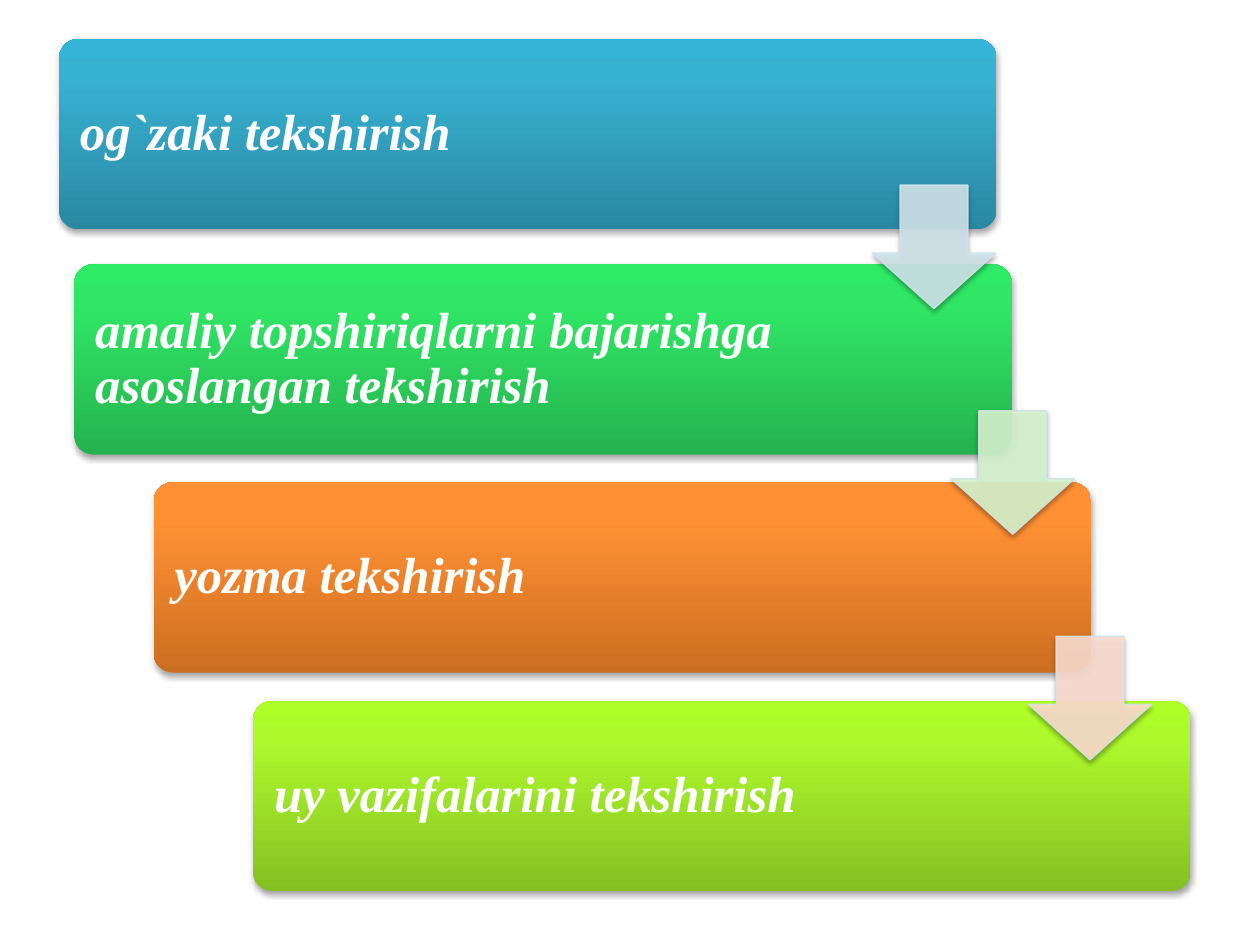
from copy import deepcopy
from dataclasses import dataclass

from lxml import etree
from pptx import Presentation
from pptx.dml.color import RGBColor
from pptx.enum.shapes import MSO_SHAPE as Shape
from pptx.enum.text import MSO_ANCHOR as Anchor, PP_ALIGN as Align
from pptx.oxml.ns import qn
from pptx.util import Pt

BOX_WIDTH, BOX_HEIGHT = 535.7, 108.7
TEXT_WIDTH, TEXT_INSET = 413.3, 3.2
ARROW_SIZE, ARROW_TOP, ARROW_PITCH = 70.6, 105.8, 128.9
MARGIN = 8.7
FONT = "Times New Roman"


@dataclass
class Step:
    text: str
    left: float
    top: float
    gradient: tuple[str, str, str]  # bottom to top


@dataclass
class Arrow:
    left: float
    color: str


STEPS = [
    Step("og`zaki tekshirish", 33.8, 22.3, ("2A88A2", "37B1D2", "34B4D6")),
    Step("amaliy topshiriqlarni bajarishga asoslangan tekshirish",
         42.5, 151.1, ("25B24E", "30E765", "2DEB64")),
    Step("yozma tekshirish", 87.8, 275.6, ("CC6E20", "FF9034", "FF9136")),
    Step("uy vazifalarini tekshirish", 144.7, 400.5, ("85C022", "ADF92C", "AFFE28")),
]
ARROWS = [Arrow(498.4, "D0E3EA"), Arrow(543.4, "D6F4CE"), Arrow(587.6, "FCDDCF")]


def rgb(value: str) -> RGBColor:
    return RGBColor.from_string(value)


def add_alpha(color_element, percent: int) -> None:
    etree.SubElement(color_element, qn("a:alpha"), val=str(percent * 1000))


def add_shadow(shape) -> None:
    """Give the shape a soft black shadow straight below it."""
    shape.shadow.inherit = False
    effects = shape._element.spPr.find(qn("a:effectLst"))
    shadow = etree.SubElement(
        effects, qn("a:outerShdw"), blurRad=str(Pt(3.1)), dist=str(Pt(1.8)),
        dir="5400000", rotWithShape="0")
    add_alpha(etree.SubElement(shadow, qn("a:srgbClr"), val="000000"), 35)


def fill_gradient(shape, colors: tuple[str, str, str]) -> None:
    shape.fill.gradient()
    shape.fill.gradient_angle = 90
    stop_list = shape._element.spPr.find(qn("a:gradFill")).find(qn("a:gsLst"))
    stop_list.append(deepcopy(stop_list[0]))
    for stop, color, position in zip(shape.fill.gradient_stops, colors, (0, 0.8, 1)):
        stop.color.rgb = rgb(color)
        stop.position = position


def add_step(slide, step: Step) -> None:
    # Rounded panel
    box = slide.shapes.add_shape(Shape.ROUNDED_RECTANGLE, Pt(step.left), Pt(step.top),
                                 Pt(BOX_WIDTH), Pt(BOX_HEIGHT))
    box.adjustments[0] = 0.1
    fill_gradient(box, step.gradient)
    box.line.fill.background()
    add_shadow(box)

    # Label, narrower than the panel
    label = slide.shapes.add_textbox(
        Pt(step.left + TEXT_INSET), Pt(step.top + TEXT_INSET),
        Pt(TEXT_WIDTH), Pt(BOX_HEIGHT - 2 * TEXT_INSET))
    frame = label.text_frame
    frame.word_wrap = True
    frame.vertical_anchor = Anchor.MIDDLE
    frame.margin_left = frame.margin_right = Pt(MARGIN)
    frame.margin_top = frame.margin_bottom = Pt(MARGIN)
    paragraph = frame.paragraphs[0]
    paragraph.text = step.text
    paragraph.alignment = Align.LEFT
    paragraph.line_spacing = 0.9
    font = paragraph.font
    font.name, font.size = FONT, Pt(29)
    font.bold = font.italic = True
    font.color.rgb = rgb("FFFFFF")


def add_arrow(slide, arrow: Arrow, top: float) -> None:
    shape = slide.shapes.add_shape(Shape.DOWN_ARROW, Pt(arrow.left), Pt(top),
                                   Pt(ARROW_SIZE), Pt(ARROW_SIZE))
    # The first value is the head length, the second the shaft width
    shape.adjustments[0], shape.adjustments[1] = 0.55, 0.45
    shape.fill.solid()
    shape.fill.fore_color.rgb = rgb(arrow.color)
    shape.line.color.rgb = rgb("D0E3EA")
    shape.line.width = Pt(0.75)
    for color_element in shape._element.spPr.iter(qn("a:srgbClr")):
        add_alpha(color_element, 90)
    add_shadow(shape)


def main() -> None:
    presentation = Presentation()
    presentation.slide_width, presentation.slide_height = Pt(720), Pt(540)
    slide = presentation.slides.add_slide(presentation.slide_layouts[6])

    # Descending steps
    for step in STEPS:
        add_step(slide, step)

    # Arrows between the steps
    for index, arrow in enumerate(ARROWS):
        add_arrow(slide, arrow, ARROW_TOP + index * ARROW_PITCH)

    presentation.save("out.pptx")


if __name__ == "__main__":
    main()
